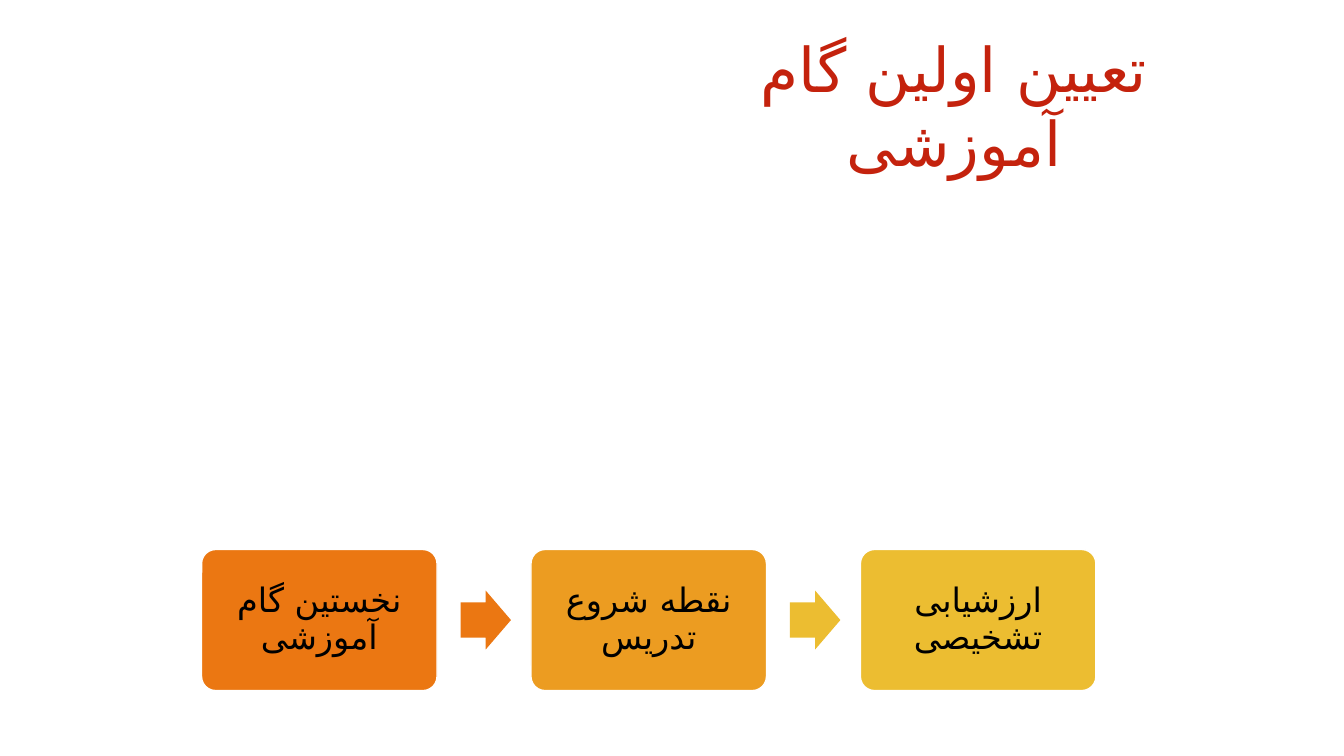
from pptx import Presentation
from pptx.dml.color import RGBColor
from pptx.enum.shapes import MSO_SHAPE
from pptx.enum.text import MSO_ANCHOR, MSO_AUTO_SIZE, PP_ALIGN
from pptx.oxml.ns import qn
from pptx.util import Pt
from lxml import etree

ROUNDED, ARROW = MSO_SHAPE.ROUNDED_RECTANGLE, MSO_SHAPE.RIGHT_ARROW
CENTER, MIDDLE = PP_ALIGN.CENTER, MSO_ANCHOR.MIDDLE

# Content: step text, box colour, colour of the arrow that follows
TITLE = "تعیین اولین گام آموزشی"
STEPS = [
    ("نخستین گام آموزشی", "EB7712", "EB7712"),
    ("نقطه شروع تدریس", "EC9C21", "ECBD31"),
    ("ارزشیابی تشخیصی", "ECBD31", None),
]

# Layout in points
FONT, PERSIAN_FONT = "League Spartan", "DejaVu Sans"
LEFT, TOP, PITCH = 144, 392.5, 235.3
BOX_W, BOX_H = 168.2, 100.8
ARROW_W, ARROW_H, ARROW_DX = 36, 42, 185
INSET = 7.2


def rgb(value):
    return RGBColor.from_string(value)


def write(tf, text, size, color):
    """Write one centred right-to-left paragraph."""
    tf.word_wrap = True
    p = tf.paragraphs[0]
    p.text = text
    p.alignment = CENTER
    p.font.name, p.font.size = FONT, Pt(size)
    p.font.color.rgb = rgb(color)
    pPr = p._p.get_or_add_pPr()
    pPr.set("rtl", "1")
    cs = etree.SubElement(pPr.find(qn("a:defRPr")), qn("a:cs"))
    cs.set("typeface", PERSIAN_FONT)
    return p


def add_shape(kind, x, y, w, h, fill, adjustments):
    sp = s.shapes.add_shape(kind, Pt(x), Pt(y), Pt(w), Pt(h))
    sp.shadow.inherit = False
    sp.fill.solid()
    sp.fill.fore_color.rgb = rgb(fill)
    for i, value in enumerate(adjustments):
        sp.adjustments[i] = value
    return sp


prs = Presentation()
prs.slide_width, prs.slide_height = Pt(960), Pt(540)
s = prs.slides.add_slide(prs.slide_layouts[6])

# Title
title = s.shapes.add_textbox(Pt(481.7), Pt(18.7), Pt(399.6), Pt(60.5))
write(title.text_frame, TITLE, 44, "C4220D")
title.text_frame.auto_size = MSO_AUTO_SIZE.SHAPE_TO_FIT_TEXT

# Steps and the arrows between them
for i, (text, fill, arrow_fill) in enumerate(STEPS):
    x = LEFT + i * PITCH
    box = add_shape(ROUNDED, x, TOP, BOX_W, BOX_H, fill, [0.1])
    box.line.color.rgb = rgb("FFFFFF")
    box.line.width = Pt(1)
    tf = box.text_frame
    tf.vertical_anchor = MIDDLE
    tf.margin_left = tf.margin_right = Pt(INSET)
    tf.margin_top = tf.margin_bottom = Pt(INSET)
    write(tf, text, 24, "000000").line_spacing = 0.9
    if arrow_fill:
        arrow = add_shape(ARROW, x + ARROW_DX, TOP + (BOX_H - ARROW_H) / 2,
                          ARROW_W, ARROW_H, arrow_fill, [0.6, 0.5])
        arrow.line.fill.background()

prs.save("out.pptx")
